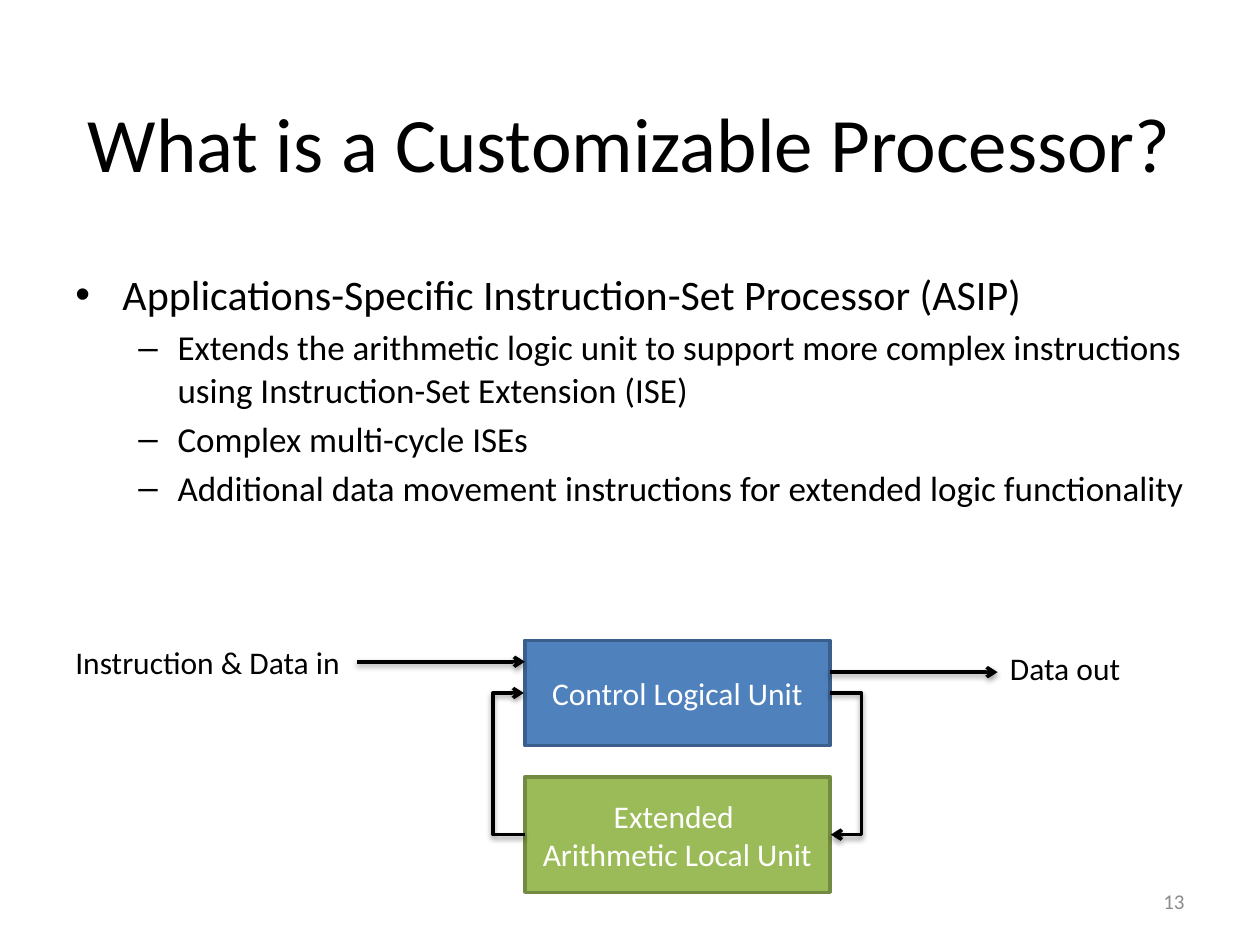
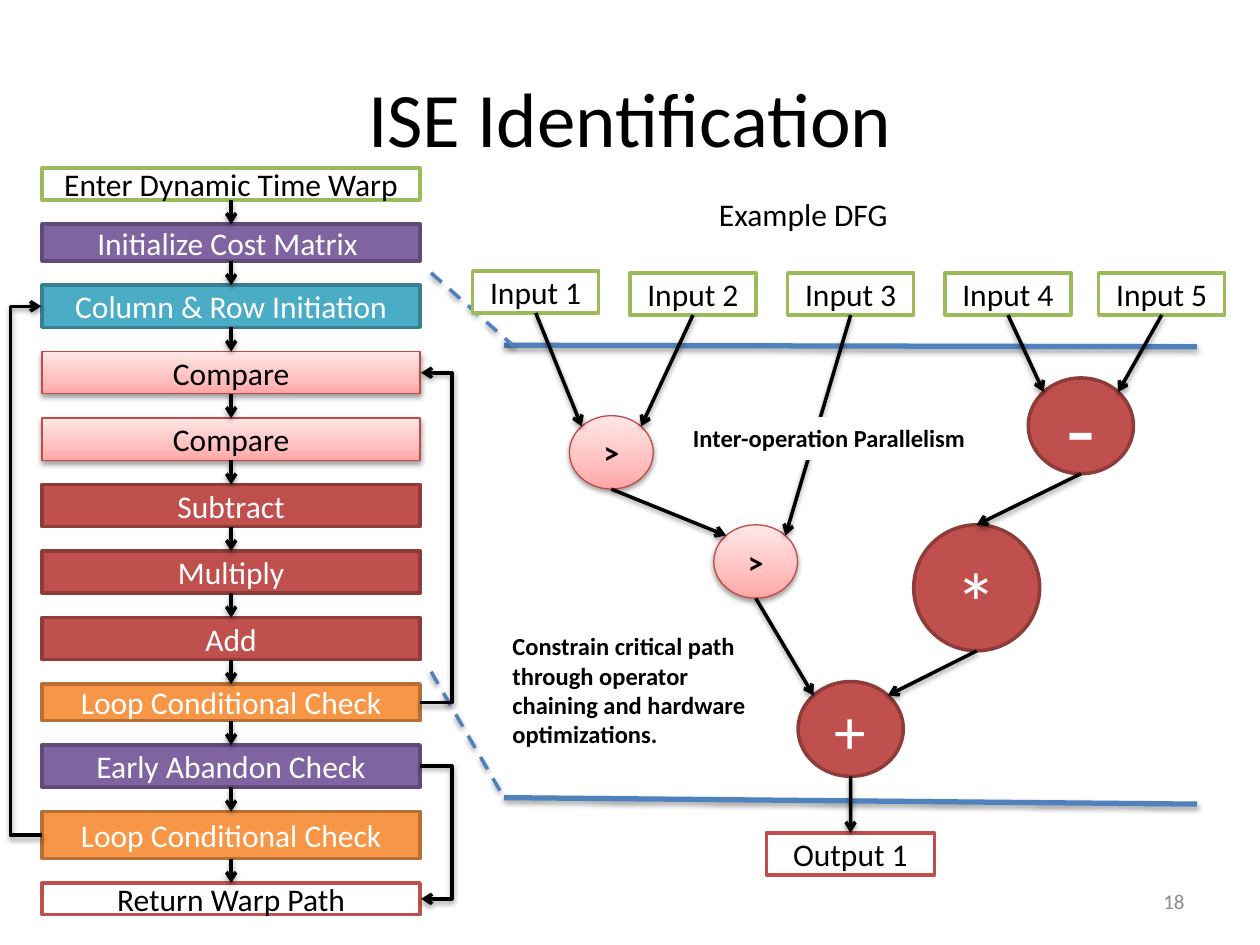
import copy

import pptx
import pptx.dml.color
import pptx.enum.dml
import pptx.enum.shapes
import pptx.enum.text
import pptx.oxml.ns
import pptx.util
from lxml import etree
from pptx.util import Cm

# Shared look
FONT = "Calibri"
BLACK, WHITE, GREY = "000000", "FFFFFF", "8C8C8C"
BLUE = "4F81BD"
PINK_STOPS = [(0, "FFA6A5"), (0.35, "FFC0BF"), (1, "FFE7E7")]

# Style name: fill, outline, text colour
STYLES = {
    "blue": (BLUE, "3A5F8C", WHITE),
    "green": ("9BBB59", "738A42", WHITE),
    "purple": ("8064A2", "5F4A78", WHITE),
    "teal": ("4BACC6", "377F92", WHITE),
    "orange": ("F79646", "B76F34", WHITE),
    "red": ("C0504D", "8E3B39", WHITE),
    "pink": (None, "BF4C48", BLACK),
    "green outline": (WHITE, "9BBB59", BLACK),
    "red outline": (WHITE, "C0504D", BLACK),
}

ALIGN = pptx.enum.text.PP_ALIGN
ANCHOR = pptx.enum.text.MSO_ANCHOR
RECTANGLE = pptx.enum.shapes.MSO_SHAPE.RECTANGLE
OVAL = pptx.enum.shapes.MSO_SHAPE.OVAL
CONNECTOR = pptx.enum.shapes.MSO_CONNECTOR
LEFT_SITE, RIGHT_SITE = 1, 3

# Points on a shape as fractions of its width and height
TOP, BOTTOM = (0.5, 0), (0.5, 1)
UPPER_LEFT, UPPER_RIGHT = (0.146, 0.146), (0.854, 0.146)


def rgb(hex_string):
    return pptx.dml.color.RGBColor.from_string(hex_string)


def add_xml(parent, tag, **attributes):
    element = etree.SubElement(parent, pptx.oxml.ns.qn(tag))
    for name, value in attributes.items():
        element.set(name, str(value))
    return element


def add_shadow(shape):
    """Soft shadow below; call it after fill and line are set."""
    effects = add_xml(shape.element.spPr, "a:effectLst")
    shadow = add_xml(effects, "a:outerShdw", blurRad=40000, dist=20000,
                     dir=5400000, rotWithShape=0)
    color = add_xml(shadow, "a:srgbClr", val=BLACK)
    add_xml(color, "a:alpha", val=38000)


# Text
def format_paragraph(paragraph, size, color, align, bold=False):
    paragraph.alignment = align
    for run in paragraph.runs:
        run.font.name = FONT
        run.font.size = pptx.util.Pt(size)
        run.font.bold = bold
        run.font.color.rgb = rgb(color)


def set_text(shape, text, size, color, align, anchor, bold=False):
    frame = shape.text_frame
    frame.word_wrap = True
    frame.vertical_anchor = anchor
    frame.text = text
    for paragraph in frame.paragraphs:
        format_paragraph(paragraph, size, color, align, bold)


def add_text(slide, text, left, top, width, height, size=18, color=BLACK,
             align=ALIGN.LEFT, anchor=ANCHOR.TOP, bold=False, fill=None):
    box = slide.shapes.add_textbox(Cm(left), Cm(top), Cm(width), Cm(height))
    if fill:
        box.fill.solid()
        box.fill.fore_color.rgb = rgb(fill)
    set_text(box, text, size, color, align, anchor, bold)
    return box


def add_title(slide, text, top):
    add_text(slide, text, 1.27, top, 22.86, 3.18, 44,
             align=ALIGN.CENTER, anchor=ANCHOR.MIDDLE)


def add_slide_number(slide, number):
    add_text(slide, str(number), 18.2, 17.65, 5.93, 1.02, 12, GREY,
             ALIGN.RIGHT, ANCHOR.MIDDLE)


def add_bullets(slide, items, left, top, width, height):
    """Each item is (level, text)."""
    # Per level: size, bullet, left margin, hanging indent
    levels = [(24, "•", 0.95, 0.95), (20, "–", 2.06, 0.79)]
    text = "\n".join(item for _, item in items)
    box = add_text(slide, text, left, top, width, height)
    for paragraph, (level, _) in zip(box.text_frame.paragraphs, items):
        size, bullet, margin, hanging = levels[level]
        format_paragraph(paragraph, size, BLACK, ALIGN.LEFT)
        paragraph.level = level
        paragraph.space_before = pptx.util.Pt(size * 0.2)
        properties = paragraph._p.get_or_add_pPr()
        properties.set("marL", str(Cm(margin)))
        properties.set("indent", str(-Cm(hanging)))
        add_xml(properties, "a:buFont", typeface="Arial")
        add_xml(properties, "a:buChar", char=bullet)


# Boxes and operators
def fill_pink(shape):
    shape.fill.gradient()
    shape.fill.gradient_angle = 90
    stop_list = shape.element.spPr.find(".//" + pptx.oxml.ns.qn("a:gsLst"))
    stop_list.insert(1, copy.deepcopy(stop_list[0]))
    for stop, (position, color) in zip(shape.fill.gradient_stops, PINK_STOPS):
        stop.position = position
        stop.color.rgb = rgb(color)


def add_node(slide, kind, text, style, left, top, width, height,
             size=18, bold=False, anchor=ANCHOR.MIDDLE):
    fill, outline, text_color = STYLES[style]
    shape = slide.shapes.add_shape(kind, Cm(left), Cm(top), Cm(width), Cm(height))
    shape.line.color.rgb = rgb(outline)
    if fill:
        shape.fill.solid()
        shape.fill.fore_color.rgb = rgb(fill)
        shape.line.width = pptx.util.Pt(2)
        shape.shadow.inherit = False
    else:
        fill_pink(shape)
        shape.line.width = pptx.util.Pt(0.75)
        add_shadow(shape)
    set_text(shape, text, size, text_color, ALIGN.CENTER, anchor, bold)
    return shape


# Lines and arrows
def style_line(connector, color=BLACK, width=2, dashed=False, arrow=True):
    connector.line.color.rgb = rgb(color)
    connector.line.width = pptx.util.Pt(width)
    if dashed:
        connector.line.dash_style = pptx.enum.dml.MSO_LINE.DASH
    if arrow:
        line = connector.element.spPr.find(pptx.oxml.ns.qn("a:ln"))
        add_xml(line, "a:tailEnd", type="arrow")
    add_shadow(connector)


def add_line(slide, begin, end, **line_style):
    """Straight line between two points given in centimetres."""
    points = [Cm(value) for value in (*begin, *end)]
    connector = slide.shapes.add_connector(CONNECTOR.STRAIGHT, *points)
    style_line(connector, **line_style)


def point_on(shape, place):
    return ((shape.left + place[0] * shape.width) / Cm(1),
            (shape.top + place[1] * shape.height) / Cm(1))


def link(slide, source, source_place, target, target_place):
    add_line(slide, point_on(source, source_place), point_on(target, target_place))


def add_loop(slide, source, target, site):
    """Elbow arrow that leaves and enters on the same side."""
    reach, step = 0.64, 0.02
    connector = slide.shapes.add_connector(CONNECTOR.ELBOW, 0, 0, 0, 0)
    connector.begin_connect(source, site)
    connector.end_connect(target, site)
    sign = 1 if site == RIGHT_SITE else -1
    connector.end_x = connector.begin_x + sign * Cm(step)
    properties = connector.element.spPr
    frame = properties.find(pptx.oxml.ns.qn("a:xfrm"))
    if frame.get("flipH") and frame.get("flipV"):
        # Both flips together are a half turn
        del frame.attrib["flipH"], frame.attrib["flipV"]
        frame.set("rot", "10800000")
    guides = properties.find(".//" + pptx.oxml.ns.qn("a:avLst"))
    add_xml(guides, "a:gd", name="adj1", fmla=f"val {round(reach / step * 100000)}")
    style_line(connector)


# Slides
def build_processor_slide(slide):
    add_title(slide, "What is a Customizable Processor?", 1.27)
    add_bullets(slide, [
        (0, "Applications-Specific Instruction-Set Processor (ASIP)"),
        (1, "Extends the arithmetic logic unit to support more complex "
            "instructions using Instruction-Set Extension (ISE)"),
        (1, "Complex multi-cycle ISEs"),
        (1, "Additional data movement instructions for extended logic functionality"),
    ], 1.27, 5.29, 22.86, 6.77)
    add_slide_number(slide, 13)

    # Block diagram
    control = add_node(slide, RECTANGLE, "Control Logical Unit", "blue",
                       10.58, 12.91, 6.15, 2.12)
    extended = add_node(slide, RECTANGLE, "Extended \nArithmetic Local Unit",
                        "green", 10.58, 15.66, 6.15, 2.33)
    add_line(slide, (7.2, 13.34), (10.58, 13.34))
    add_line(slide, (16.73, 13.55), (20.11, 13.55))
    add_loop(slide, control, extended, RIGHT_SITE)
    add_loop(slide, extended, control, LEFT_SITE)
    add_text(slide, "Instruction & Data in", 1.27, 12.83, 6.15, 1.03)
    add_text(slide, "Data out", 20.11, 12.95, 3.81, 1.03)


def build_flowchart(slide):
    # Each step: text, style, height
    steps = [
        ("Enter Dynamic Time Warp", "green outline", 0.64),
        ("Initialize Cost Matrix ", "purple", 0.74),
        ("Column & Row Initiation", "teal", 0.85),
        ("Compare", "pink", 0.85),
        ("Compare", "pink", 0.85),
        ("Subtract", "red", 0.85),
        ("Multiply", "red", 0.85),
        ("Add", "red", 0.85),
        ("Loop Conditional Check", "orange", 0.74),
        ("Early Abandon Check", "purple", 0.85),
        ("Loop Conditional Check", "orange", 0.95),
        ("Return Warp Path", "red outline", 0.64),
    ]
    top, gap = 3.39, 0.49
    boxes = []
    for text, style, height in steps:
        boxes.append(add_node(slide, RECTANGLE, text, style, 0.85, top, 7.62, height))
        top += height + gap
    for upper, lower in zip(boxes, boxes[1:]):
        link(slide, upper, BOTTOM, lower, TOP)

    column_start, first_compare = boxes[2:4]
    inner_check, abandon_check, outer_check, finish = boxes[8:]
    add_loop(slide, inner_check, first_compare, RIGHT_SITE)
    add_loop(slide, abandon_check, finish, RIGHT_SITE)
    add_loop(slide, outer_check, column_start, LEFT_SITE)


def build_data_flow_graph(slide):
    # Band limits and zoom lines
    for begin, end in [((10.16, 6.96), (24.13, 6.99)), ((10.16, 16.08), (24.13, 16.21))]:
        add_line(slide, begin, end, color=BLUE, width=3, arrow=False)
    for begin, end in [((8.69, 5.5), (10.37, 6.99)), ((8.69, 13.54), (10.16, 16.08))]:
        add_line(slide, begin, end, color=BLUE, dashed=True, arrow=False)
    add_text(slide, "Example DFG", 10.16, 3.81, 12.07, 1.03, align=ALIGN.CENTER)

    # Inputs, operators and output
    corners = [(9.53, 5.46), (12.7, 5.5), (15.88, 5.5), (19.05, 5.5), (22.15, 5.5)]
    inputs = [add_node(slide, RECTANGLE, f"Input {number}", "green outline",
                       left, top, 2.54, 0.85)
              for number, (left, top) in enumerate(corners, 1)]
    compare, next_compare = [
        add_node(slide, OVAL, ">", "pink", left, top, 1.69, 1.48, bold=True)
        for left, top in [(11.48, 8.38), (14.39, 10.58)]]
    minus = add_node(slide, OVAL, "-", "red", 20.73, 7.62, 2.12, 1.93, 54)
    times = add_node(slide, OVAL, "*", "red", 18.42, 10.58, 2.54, 2.54, 48,
                     anchor=ANCHOR.TOP)
    plus = add_node(slide, OVAL, "+", "red", 16.09, 13.74, 2.12, 1.91, 36)
    output = add_node(slide, RECTANGLE, "Output 1", "red outline",
                      15.45, 16.79, 3.39, 0.85)

    # Every arrow leaves from the bottom of its source
    for source, target, place in [
        (inputs[0], compare, UPPER_LEFT),
        (inputs[1], compare, UPPER_RIGHT),
        (compare, next_compare, UPPER_LEFT),
        (inputs[2], next_compare, UPPER_RIGHT),
        (inputs[3], minus, UPPER_LEFT),
        (inputs[4], minus, UPPER_RIGHT),
        (minus, times, TOP),
        (next_compare, plus, UPPER_LEFT),
        (times, plus, UPPER_RIGHT),
        (plus, output, TOP),
    ]:
        link(slide, source, BOTTOM, target, place)

    # Remarks
    add_text(slide, "Constrain critical path through operator chaining and "
             "hardware optimizations.", 10.08, 12.6, 5.36, 2.64, 14,
             bold=True, fill=WHITE)
    add_text(slide, "Inter-operation Parallelism", 13.72, 8.41, 6.12, 0.86, 14,
             bold=True, fill=WHITE)


def build_identification_slide(slide):
    add_title(slide, "ISE Identification", 0.76)
    add_slide_number(slide, 18)
    build_data_flow_graph(slide)
    build_flowchart(slide)


def main():
    presentation = pptx.Presentation()
    presentation.slide_width = Cm(25.4)
    presentation.slide_height = Cm(19.05)
    blank_layout = presentation.slide_layouts[6]
    for build in (build_processor_slide, build_identification_slide):
        build(presentation.slides.add_slide(blank_layout))
    presentation.save("out.pptx")


if __name__ == "__main__":
    main()
